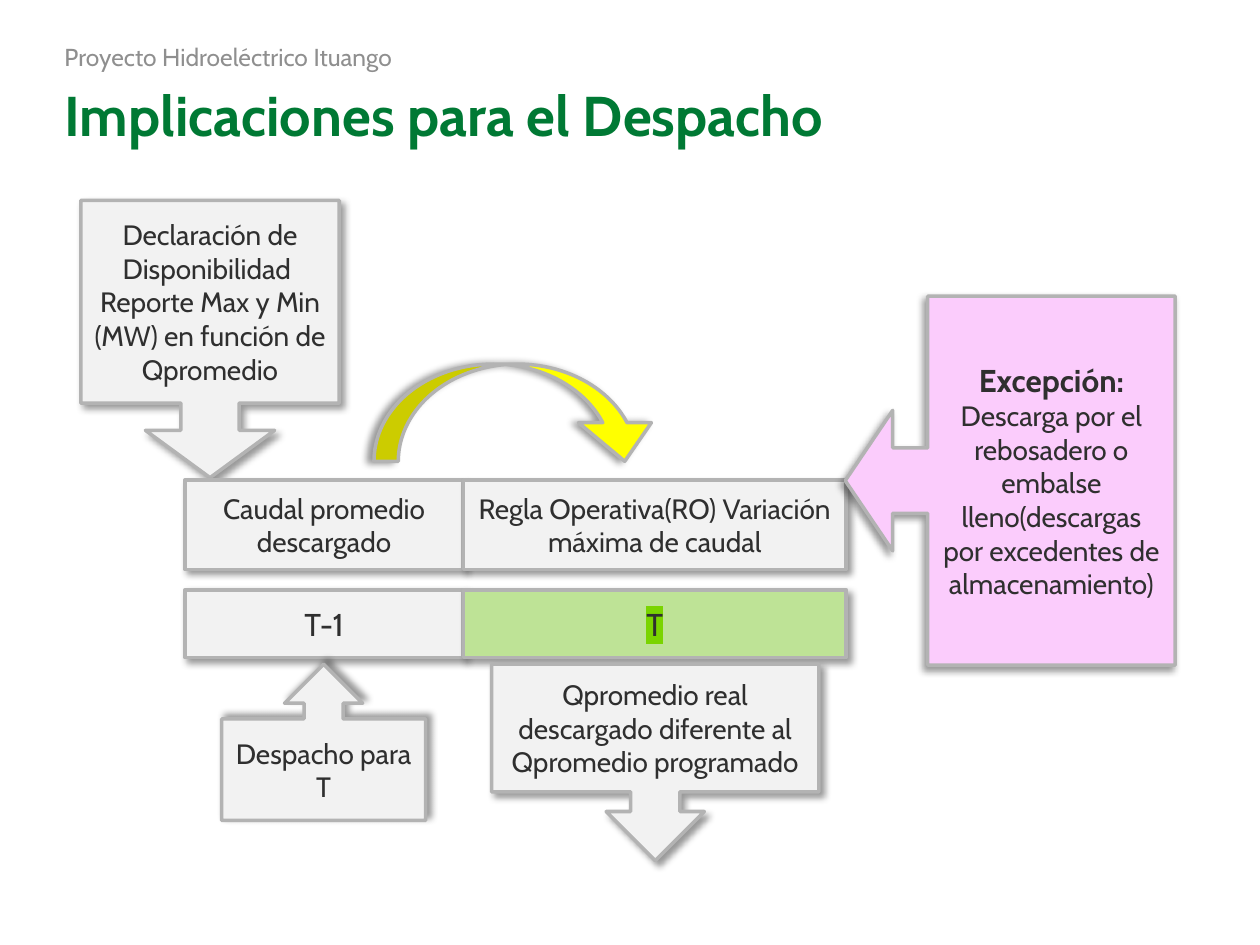
"""Build the slide on what the flow rule means for power dispatch."""
from lxml import etree
from pptx import Presentation
from pptx.dml.color import RGBColor
from pptx.enum.shapes import MSO_SHAPE
from pptx.enum.text import MSO_ANCHOR, MSO_AUTO_SIZE, PP_ALIGN
from pptx.oxml import parse_xml
from pptx.oxml.ns import nsdecls, qn
from pptx.util import Cm, Pt

RECTANGLE = MSO_SHAPE.RECTANGLE
CURVED_ARROW = MSO_SHAPE.CURVED_DOWN_ARROW
CALLOUT_DOWN = MSO_SHAPE.DOWN_ARROW_CALLOUT
CALLOUT_UP = MSO_SHAPE.UP_ARROW_CALLOUT
CALLOUT_LEFT = MSO_SHAPE.LEFT_ARROW_CALLOUT
MIDDLE = MSO_ANCHOR.MIDDLE
NO_FIT = MSO_AUTO_SIZE.NONE
LEFT, CENTER = PP_ALIGN.LEFT, PP_ALIGN.CENTER

WHITE = RGBColor(0xFF, 0xFF, 0xFF)
GREEN = RGBColor(0x00, 0x79, 0x34)
GRAY = RGBColor(0x8F, 0x8F, 0x8F)
INK = RGBColor(0x2F, 0x2F, 0x2F)
PALE = RGBColor(0xF2, 0xF2, 0xF2)
BORDER = RGBColor(0xB3, 0xB3, 0xB3)
YELLOW = RGBColor(0xFF, 0xFF, 0x00)
LIGHT_GREEN = RGBColor(0xBE, 0xE3, 0x96)
MARKER = RGBColor(0x7A, 0xD4, 0x00)
PINK = RGBColor(0xFB, 0xCC, 0xFC)


class DispatchPage:
    def __init__(self, deck):
        self.font = "Cabin"
        self.page = deck.slides.add_slide(deck.slide_layouts[1])
        self.page.background.fill.solid()
        self.page.background.fill.fore_color.rgb = WHITE

    def style(self, span, size, color=INK, bold=False):
        span.font.size = Pt(size)
        span.font.bold = bold
        span.font.color.rgb = color
        span.font.name = self.font

    def place(self, box, left, top, width, height):
        box.left, box.top = Cm(left), Cm(top)
        box.width, box.height = Cm(width), Cm(height)

    def heading(self, box, area, text, size, color, bold=False):
        self.place(box, *area)
        frame = box.text_frame
        frame.text = text
        frame.word_wrap = True
        frame.auto_size = NO_FIT
        frame.vertical_anchor = MIDDLE
        frame.margin_left = frame.margin_right = 0
        frame.margin_top = frame.margin_bottom = 0
        para = frame.paragraphs[0]
        properties = para._p.get_or_add_pPr()
        properties.set("marL", "0")
        properties.set("indent", "0")
        etree.SubElement(properties, qn("a:buNone"))
        para.alignment = LEFT
        para.space_before = Pt(0)
        self.style(para.runs[0], size, color, bold)

    def shadow(self, box, angle):
        box.shadow.inherit = False
        effects = box._element.spPr.find(qn("a:effectLst"))
        effects.append(parse_xml(
            f'<a:outerShdw {nsdecls("a")} blurRad="{Pt(4)}" dist="{Pt(3)}" '
            f'dir="{angle * 60000}" rotWithShape="0"><a:srgbClr val="000000">'
            '<a:alpha val="40000"/></a:srgbClr></a:outerShdw>'))

    def block(self, kind, area, text="", fill=PALE, size=16, bold=False,
              angle=45, adjust=()):
        box = self.page.shapes.add_shape(kind, *map(Cm, area))
        for index, value in enumerate(adjust):
            box.adjustments[index] = value
        box.fill.solid()
        box.fill.fore_color.rgb = fill
        box.line.color.rgb = BORDER
        box.line.width = Pt(2)
        self.shadow(box, angle)
        frame = box.text_frame
        frame.word_wrap = True
        frame.vertical_anchor = MIDDLE
        frame.text = text
        for para in frame.paragraphs:
            para.alignment = CENTER
            for span in para.runs:
                self.style(span, size, bold=bold)
        return box

    def highlight(self, span, color):
        fill = span._r.rPr.find(qn("a:solidFill"))
        fill.addnext(parse_xml(
            f'<a:highlight {nsdecls("a")}><a:srgbClr val="{color}"/></a:highlight>'))


def main():
    deck = Presentation()
    deck.slide_width, deck.slide_height = Cm(25.4), Cm(19.05)
    dispatch = DispatchPage(deck)
    title, body = dispatch.page.placeholders
    dispatch.heading(body, (1.3, 0.74, 21.03, 0.79),
                     "Proyecto Hidroeléctrico Ituango", 14, GRAY)
    dispatch.heading(title, (1.3, 1.7, 21.03, 1.19),
                     "Implicaciones para el Despacho", 32, GREEN, True)

    dispatch.block(
        CALLOUT_DOWN, (1.63, 4.04, 5.21, 5.59),
        "Declaración de Disponibilidad \n"
        "Reporte Max y Min (MW) en función de Qpromedio",
        adjust=(0.226, 0.25, 0.183, 0.731))

    columns = ((3.73, 5.61), (9.34, 7.72))
    rows = (
        (9.68, 1.8, 16, (("Caudal promedio descargado", PALE),
                         ("Regla Operativa(RO) Variación máxima de caudal", PALE))),
        (11.89, 1.37, 18, (("T-1", PALE), ("T", LIGHT_GREEN))),
    )
    for top, height, size, cells in rows:
        for (left, width), (text, fill) in zip(columns, cells):
            box = dispatch.block(RECTANGLE, (left, top, width, height),
                                 text, fill, size)
    dispatch.highlight(box.text_frame.paragraphs[0].runs[0], MARKER)

    dispatch.block(CURVED_ARROW, (7.54, 7.34, 5.79, 1.96), fill=YELLOW,
                   angle=180, adjust=(0.25, 0.75, 0.397))
    dispatch.block(CALLOUT_UP, (4.47, 13.39, 4.11, 3.15),
                   "Despacho para T", angle=315)
    dispatch.block(CALLOUT_DOWN, (9.91, 13.39, 6.6, 3.96),
                   "Qpromedio real descargado diferente al Qpromedio programado")

    exception = dispatch.block(
        CALLOUT_LEFT, (17.04, 5.97, 6.65, 7.44), "Excepción:", PINK, 18, True,
        135, (0.198, 0.213, 0.144, 0.75))
    span = exception.text_frame.paragraphs[0].add_run()
    span.text = (" Descarga por el rebosadero o embalse lleno"
                 "(descargas por excedentes de almacenamiento)")
    dispatch.style(span, 16)
    deck.save("out.pptx")


if __name__ == "__main__":
    main()
